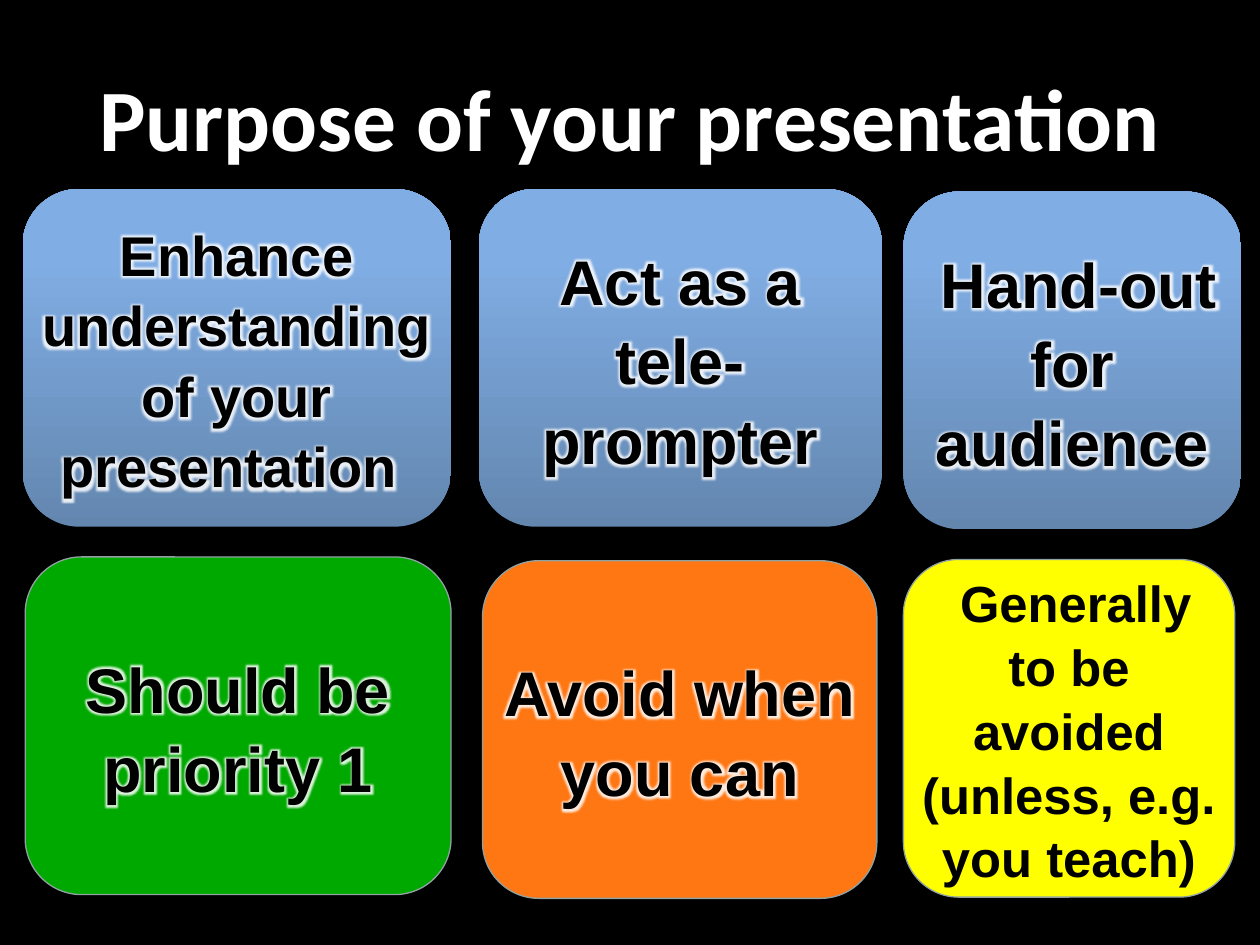
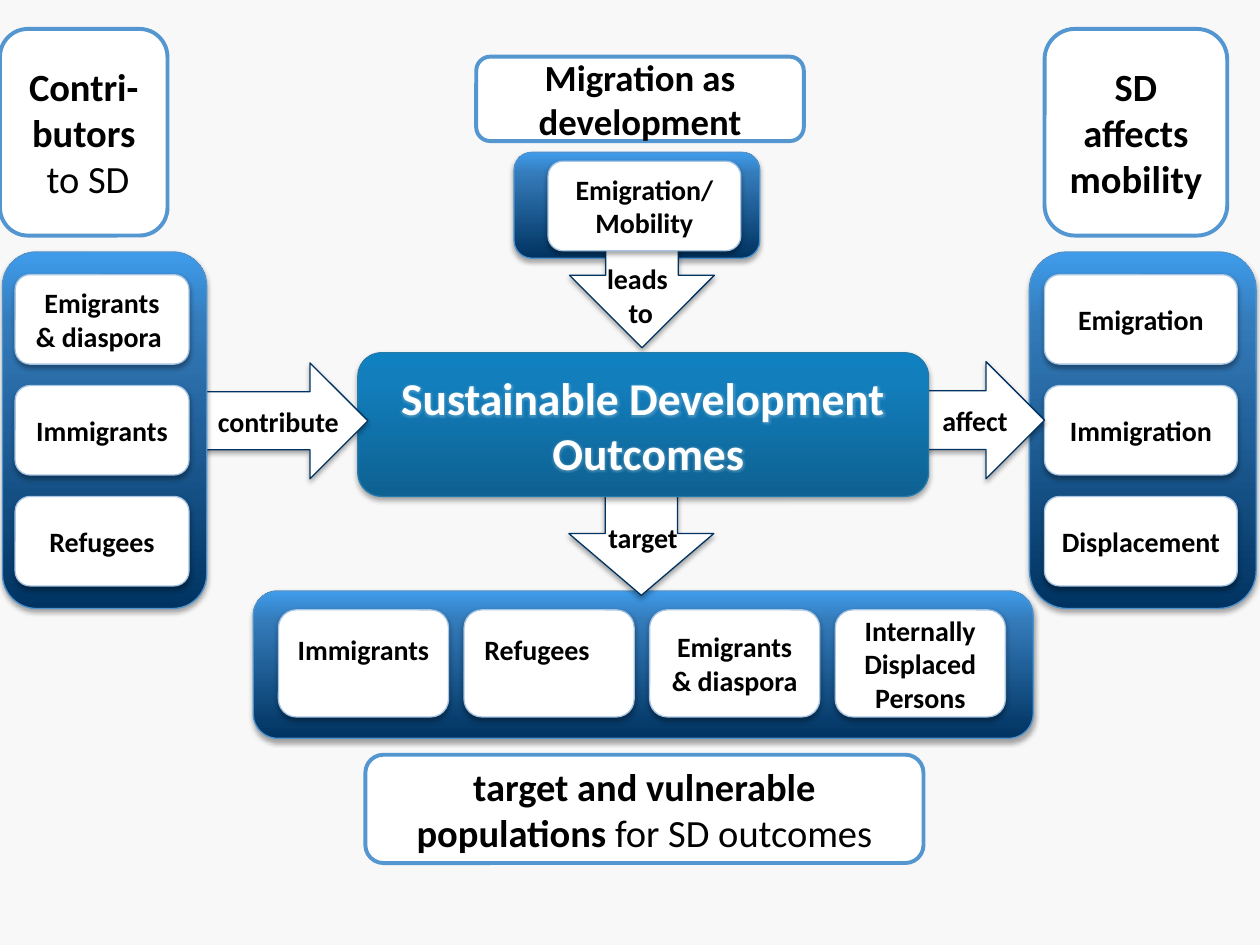
from dataclasses import dataclass
from pptx import Presentation
from pptx.dml.color import RGBColor as Rgb
from pptx.enum.shapes import MSO_SHAPE as Kind
from pptx.enum.text import MSO_ANCHOR as Anchor, MSO_AUTO_SIZE as Fit, PP_ALIGN as Align
from pptx.oxml import parse_xml
from pptx.oxml.ns import nsdecls, qn
from pptx.util import Inches, Pt


@dataclass(frozen=True)
class Theme:
    """Colours, fonts and type sizes."""
    back: str = "F8F8F8"
    black: str = "000000"
    white: str = "FFFFFF"
    green: str = "00A900"
    orange: str = "FF7713"
    yellow: str = "FFFF00"
    rim: str = "91A2A3"
    navy: str = "003361"
    edge: str = "4F93CE"
    pale: str = "A8C5E3"
    frame: str = "5496D0"
    core: str = "237BAD"
    sky: tuple = ((0, "6386AF"), (80, "80ADE4"), (100, "7FAEE7"))
    deep: tuple = ((0, "003361"), (80, "347BBA"), (100, "3F9CEB"))
    teal: tuple = ((0, "0E6191"), (80, "127EBC"), (100, "0F80C0"))
    sans: str = "Arial"
    body: str = "Calibri"
    title: int = 50
    big: int = 36
    mid: int = 32
    low: int = 29
    gap: int = 28
    hub: int = 26
    head: int = 22
    top: int = 21
    small: int = 16


T = Theme()
WIDE, HIGH = Inches(10), Inches(7.5)
COLS, ROWS = 100, 75
PAD = (1, 0.5, 1, 0.5)
BARE = (0, 0, 0, 0)


def place(box):
    """Turn columns and rows into slide lengths."""
    x, y, w, h = box
    return (round(x * WIDE / COLS), round(y * HIGH / ROWS),
            round(w * WIDE / COLS), round(h * HIGH / ROWS))


def within(box, x, y, w, h):
    """Shift a part into its parent box."""
    return box[0] + x, box[1] + y, w, h


def paint(shape, fill):
    """Fill with one colour or with a rising gradient."""
    if isinstance(fill, str):
        shape.fill.solid()
        shape.fill.fore_color.rgb = Rgb.from_string(fill)
        return
    stops = "".join(f'<a:gs pos="{at * 1000}"><a:srgbClr val="{tone}"/></a:gs>'
                    for at, tone in fill)
    grad = parse_xml(f'<a:gradFill {nsdecls("a")} rotWithShape="1"><a:gsLst>{stops}'
                     '</a:gsLst><a:lin ang="16200000" scaled="0"/></a:gradFill>')
    shape._element.spPr.find(qn("a:prstGeom")).addnext(grad)


def shade(shape):
    """Cast a soft shadow downwards."""
    shape._element.spPr.find(qn("a:effectLst")).append(parse_xml(
        f'<a:outerShdw {nsdecls("a")} blurRad="{Pt(3.1)}" dist="{Pt(1.8)}" dir="5400000" '
        f'rotWithShape="0"><a:srgbClr val="{T.black}"><a:alpha val="35000"/></a:srgbClr>'
        '</a:outerShdw>'))


def halo(run, size, alpha):
    """Put a white glow round the letters."""
    run._r.rPr.find(qn("a:solidFill")).addnext(parse_xml(
        f'<a:effectLst {nsdecls("a")}><a:glow rad="{Pt(size)}"><a:srgbClr val="{T.white}">'
        f'<a:alpha val="{alpha * 1000}"/></a:srgbClr></a:glow></a:effectLst>'))


def write(shape, paras, size, face=T.body, tone=T.black, align=Align.CENTER,
          anchor=Anchor.MIDDLE, pad=PAD, glow=None, lead=None):
    """Set paragraphs of (text, bold, size) runs."""
    frame = shape.text_frame
    frame.word_wrap = True
    frame.vertical_anchor = anchor
    (frame.margin_left, frame.margin_top,
     frame.margin_right, frame.margin_bottom) = (Inches(n / 10) for n in pad)
    for i, runs in enumerate(paras):
        para = frame.add_paragraph() if i else frame.paragraphs[0]
        para.alignment = align
        if lead:
            para.line_spacing = lead
        for text, bold, own in runs:
            run = para.add_run()
            run.text = text
            font = run.font
            font.name, font.size, font.bold = face, Pt(own or size), bold
            font.color.rgb = Rgb.from_string(tone)
            if glow:
                halo(run, *glow)


def lines(*texts):
    """Make one bold run per paragraph."""
    return [[(text, True, None)] for text in texts]


def draw(slide, kind, box, fill, line=None, width=0.75, shadow=True):
    """Add a preset shape."""
    shape = slide.shapes.add_shape(kind, *place(box))
    shape.shadow.inherit = False
    paint(shape, fill)
    if line:
        shape.line.color.rgb = Rgb.from_string(line)
        shape.line.width = Pt(width)
    else:
        shape.line.fill.background()
    if shadow:
        shade(shape)
    return shape


def label(slide, box, paras, size, **style):
    """Add a plain text box."""
    text = slide.shapes.add_textbox(*place(box))
    write(text, paras, size, **style)
    return text


def start(deck):
    """Add a blank slide with the shared ground."""
    slide = deck.slides.add_slide(deck.slide_layouts[6])
    slide.background.fill.solid()
    slide.background.fill.fore_color.rgb = Rgb.from_string(T.back)
    return slide


def tiles(slide, box, items, line=None):
    """Lay a row of large rounded tiles."""
    for x, drop, wide, fill, size, runs, glow in items:
        tile = draw(slide, Kind.ROUNDED_RECTANGLE,
                    within(box, x, drop, wide, box[3]), fill, line)
        write(tile, [runs], size, T.sans, pad=BARE, glow=glow, lead=1.05)


def card(slide, box, text, **style):
    """Add a small white card."""
    shape = draw(slide, Kind.ROUNDED_RECTANGLE, box, T.white, T.pale)
    write(shape, lines(text), T.small, **style)


def panel(slide, box):
    """Add a dark blue panel."""
    draw(slide, Kind.ROUNDED_RECTANGLE, box, T.deep, T.edge)


def stack(slide, box, left, wide, names):
    """Add a panel with cards one below another."""
    panel(slide, box)
    for i, name in enumerate(names):
        card(slide, within(box, left, 1.8 + 8.8 * i, wide, 7.1), name)


def shelf(slide, box, items):
    """Add a panel with cards side by side."""
    panel(slide, box)
    for i, (name, style) in enumerate(items):
        card(slide, within(box, 2 + 14.73 * i, 1.5, 13.5, 8.5), name, **style)


def banner(slide, box, paras, size=T.head):
    """Add an outlined heading."""
    shape = draw(slide, Kind.ROUNDED_RECTANGLE, box, T.white, T.frame, 2.25, False)
    write(shape, paras, size)


def arrow(slide, box, text=None, turn=0, pad=BARE):
    """Add a white block arrow."""
    shape = draw(slide, Kind.RIGHT_ARROW, box, T.white, T.navy)
    shape.rotation = turn
    if text:
        write(shape, lines(text), T.small, align=Align.RIGHT, pad=pad)


def purpose(deck):
    """Build the slide on purposes."""
    slide = start(deck)
    draw(slide, Kind.RECTANGLE, (0, 0, COLS, ROWS), T.black)
    label(slide, (5, 3, 90, 12.5), lines("Purpose of your presentation"),
          T.title, tone=T.white)
    glow = (6, 85)
    space = (" ", True, T.gap)
    tiles(slide, (0, 15, COLS, 26.8), [
        (1.8, 0, 34, T.sky, T.mid,
         [("Enhance understanding of your presentation ", True, None)], glow),
        (38, 0, 32, T.sky, T.big, [("Act as a tele-prompter", True, None)], glow),
        (71.7, 0.2, 26.8, T.sky, T.big,
         [space, ("Hand-out for audience", True, None)], glow)])
    tiles(slide, (0, 44.2, COLS, 26.8), [
        (2, 0, 33.8, T.green, T.big, [("Should be priority 1", True, None)], glow),
        (38.3, 0.3, 31.3, T.orange, T.big, [("Avoid when you can", True, None)], glow),
        (71.7, 0.2, 26.3, T.yellow, T.low,
         [space, ("Generally to be avoided (unless, e.g. you teach)", True, None)], None)],
        T.rim)


def flow(deck):
    """Build the slide on migration and outcomes."""
    slide = start(deck)
    panel(slide, (40.8, 12.1, 19.5, 8.4))
    shelf(slide, (20.1, 46.9, 61.9, 11.7), [
        ("Immigrants", {"pad": (1, 0.5, 1, 2.7)}),
        ("Refugees", {"pad": (1.2, 0.5, 1, 2.7), "align": Align.LEFT}),
        ("Emigrants & diaspora", {}),
        ("Internally Displaced Persons", {"pad": (0.9, 0.5, 0.9, 0.5)})])
    stack(slide, (81.7, 20, 18, 28.3), 1.2, 15.3,
          ("Emigration", "Immigration", "Displacement"))
    arrow(slide, (46, 36.6, 9.8, 11.5), turn=90)
    arrow(slide, (69.5, 28.7, 13.4, 9.3), "affect", pad=(0, 0, 0.6, 0))
    arrow(slide, (44.8, 15.7, 12.3, 11.5), turn=90)
    hub = draw(slide, Kind.ROUNDED_RECTANGLE, (28.4, 28, 45.3, 11.4), T.teal, T.core)
    write(hub, lines("Sustainable Development", " Outcomes"), T.hub,
          tone=T.white, pad=BARE, glow=(4, 20))
    for box, texts, align in (
            ((47.3, 40.8, 13.1, 3.7), ["target"], Align.LEFT),
            ((45.1, 20.3, 11.5, 6.4), ["leads ", "to"], Align.CENTER)):
        text = label(slide, box, lines(*texts), T.small, align=align, anchor=Anchor.TOP)
        text.text_frame.auto_size = Fit.SHAPE_TO_FIT_TEXT
    card(slide, (43.5, 12.8, 15.3, 7.1), "Emigration/Mobility")
    arrow(slide, (11, 28.8, 18.2, 9.2), "contribute")
    stack(slide, (0.2, 20, 16.2, 28.3), 1, 13.8,
          ("Emigrants & diaspora ", "Immigrants", "Refugees"))
    banner(slide, (29, 59.9, 44.3, 8.6),
           [[("target and vulnerable populations ", True, None),
             ("for SD outcomes", False, None)]])
    banner(slide, (82.9, 2.3, 14.5, 16.4), lines("SD affects mobility"))
    banner(slide, (37.8, 4.5, 26, 6.7), lines("Migration as development"), T.top)
    banner(slide, (0, 2.3, 13.3, 16.4),
           [[("Contri-butors", True, None)], [(" to SD", False, None)]])


def main():
    """Build and save the deck."""
    deck = Presentation()
    deck.slide_width, deck.slide_height = WIDE, HIGH
    purpose(deck)
    flow(deck)
    deck.save("out.pptx")


if __name__ == "__main__":
    main()
